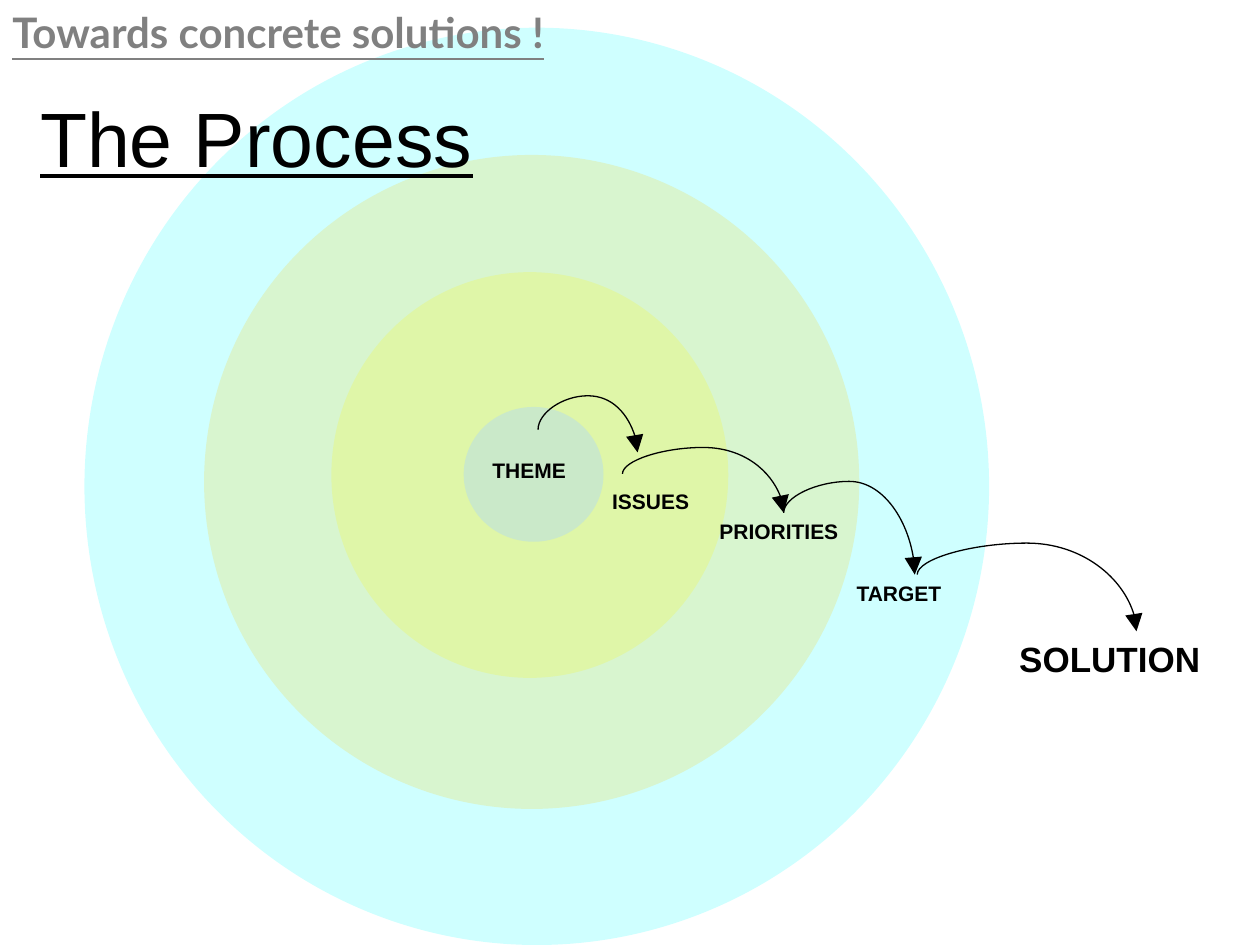
from dataclasses import dataclass

from lxml import etree
from pptx import Presentation
from pptx import util as u
from pptx.dml.color import RGBColor
from pptx.enum import shapes, text
from pptx.oxml import ns


@dataclass(frozen=True)
class Theme:
    ink: str = "000000"
    motto: str = "808080"
    outer: str = "00FFFF"
    middle: str = "FFCC00"
    inner: str = "FFFF00"
    core: str = "BBE0E3"
    ring_opacity: int = 19
    core_opacity: int = 56
    font: str = "Arial"
    motto_font: str = "Lato"
    title_size: int = 44
    motto_size: int = 24
    solution_size: int = 20
    label_size: int = 12
    arrow_width: float = 0.75


THEME = Theme()


def add_child(parent, tag, **attributes):
    return etree.SubElement(parent, ns.qn(tag), **attributes)


def add_ring(slide, box, color, opacity):
    ring = slide.shapes.add_shape(
        shapes.MSO_SHAPE.OVAL, *(u.Inches(length) for length in box))
    ring.shadow.inherit = False
    ring.line.fill.background()
    ring.fill.solid()
    ring.fill.fore_color.rgb = RGBColor.from_string(color)
    tint = ring.element.spPr.find(".//" + ns.qn("a:srgbClr"))
    add_child(tint, "a:alpha", val=str(opacity * 1000))


def add_text(slide, box, wording, size, color=THEME.ink, font=THEME.font,
             bold=True, underline=False, indent=0, grow=True):
    label = slide.shapes.add_textbox(*(u.Inches(length) for length in box))
    frame = label.text_frame
    frame.word_wrap = True
    frame.margin_left = u.Inches(0.1 + indent)
    if grow:
        frame.auto_size = text.MSO_AUTO_SIZE.SHAPE_TO_FIT_TEXT
    else:
        frame.vertical_anchor = text.MSO_ANCHOR.MIDDLE
    run = frame.paragraphs[0].add_run()
    run.text = wording
    run.font.name = font
    run.font.size = u.Pt(size)
    run.font.bold = bold
    run.font.underline = underline
    run.font.color.rgb = RGBColor.from_string(color)


def add_leap(slide, start, end, rise):
    (x1, y1), (x2, y2) = start, end
    center_x, center_y = (x1 + x2) / 2, (y1 + y2) / 2
    half_span, half_drop = (x2 - x1) / 2, (y2 - y1) / 2
    leap = slide.shapes.add_connector(
        shapes.MSO_CONNECTOR.CURVE,
        u.Inches(center_x - half_drop), u.Inches(center_y + half_span),
        u.Inches(center_x + half_drop), u.Inches(center_y - half_span))
    leap.line.color.rgb = RGBColor.from_string(THEME.ink)
    leap.line.width = u.Pt(THEME.arrow_width)
    properties = leap.element.spPr
    properties.find(ns.qn("a:xfrm")).set("rot", str(90 * 60000))
    adjustments = properties.find(".//" + ns.qn("a:avLst"))
    bend = round(-rise / (y2 - y1) * 100000)
    add_child(adjustments, "a:gd", name="adj1", fmla=f"val {bend}")
    add_child(properties.find(ns.qn("a:ln")), "a:tailEnd",
              type="triangle", w="lg", len="lg")
    add_child(properties, "a:effectLst")


def main():
    deck = Presentation()
    deck.slide_width, deck.slide_height = u.Inches(10), u.Inches(7.5)
    slide = deck.slides.add_slide(deck.slide_layouts[6])

    for box, color, opacity in (
        ((0.67, 0.22, 7.18, 7.28), THEME.outer, THEME.ring_opacity),
        ((1.62, 1.23, 5.2, 5.19), THEME.middle, THEME.ring_opacity),
        ((2.63, 2.16, 3.15, 3.22), THEME.inner, THEME.ring_opacity),
        ((3.68, 3.23, 1.11, 1.07), THEME.core, THEME.core_opacity),
    ):
        add_ring(slide, box, color, opacity)

    for box, stage, indent in (
        ((4.76, 3.83, 1.34, 0.3), "ISSUES", 0),
        ((3.81, 3.58, 0.92, 0.3), "THEME", 0),
        ((5.24, 4.07, 1.97, 0.3), "PRIORITIES", 0.37),
        ((6.7, 4.56, 1.11, 0.3), "TARGET", 0),
    ):
        add_text(slide, box, stage, THEME.label_size, indent=indent)

    add_text(slide, (0.22, 0.69, 9, 0.79), "The Process", THEME.title_size,
             bold=False, underline=True, grow=False)
    add_text(slide, (0, 0, 6.74, 0.5), "Towards concrete solutions !",
             THEME.motto_size, THEME.motto, THEME.motto_font, underline=True)
    add_text(slide, (7.99, 5.01, 2.01, 0.43), "SOLUTION", THEME.solution_size)

    for start, end, rise in (
        ((4.27, 3.41), (5.06, 3.59), 0.27),
        ((4.94, 3.76), (6.22, 4.07), 0.21),
        ((6.22, 4.07), (7.26, 4.56), 0.25),
        ((7.28, 4.56), (9.02, 5.01), 0.25),
    ):
        add_leap(slide, start, end, rise)

    deck.save("out.pptx")


if __name__ == "__main__":
    main()
